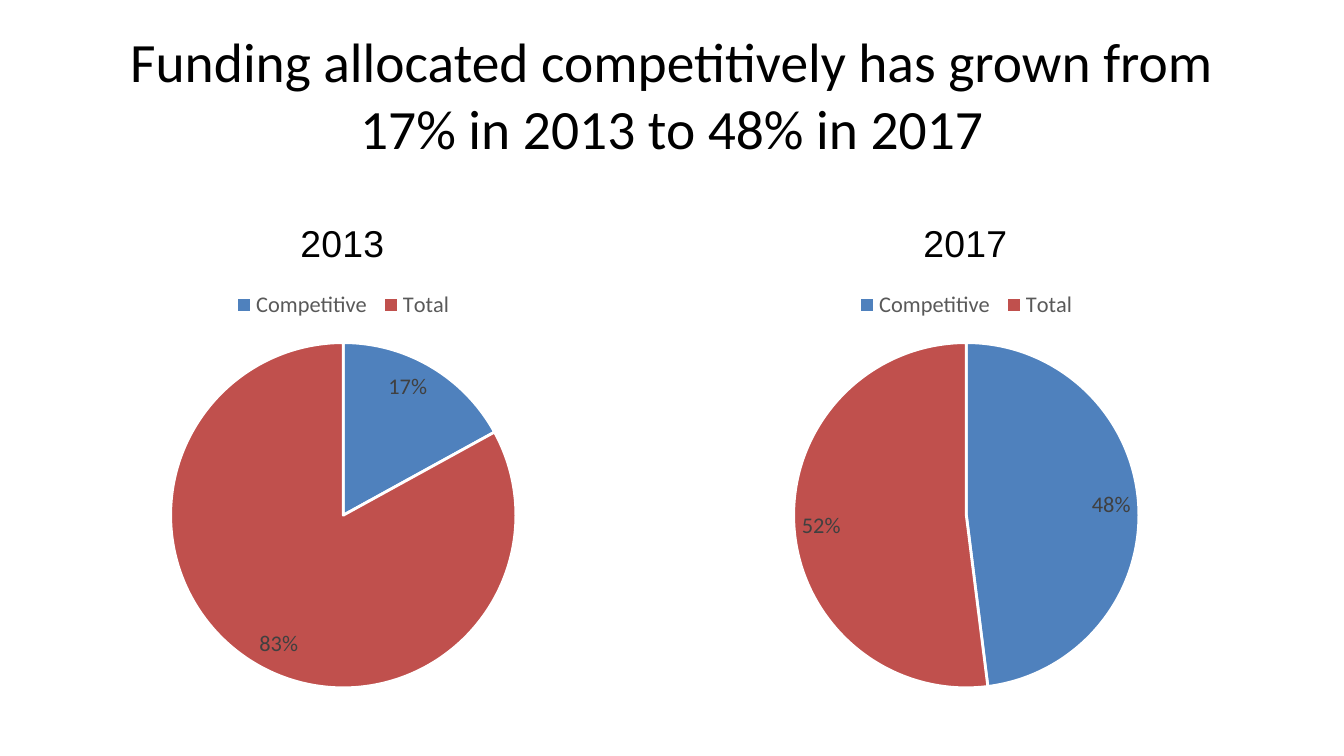
import pptx
import pptx.chart.data
import pptx.dml.color
import pptx.enum.chart
import pptx.enum.text
import pptx.oxml
import pptx.oxml.ns
import pptx.util

Inches, Pt = pptx.util.Inches, pptx.util.Pt

# Content
TITLE_LINES = ["Funding allocated competitively has grown from",
               "17% in 2013 to 48% in 2017"]
CATEGORIES = ["Competitive", "Total"]
PIES = [
    {"year": "2013", "shares": (17, 83), "left": -0.2, "width": 5.51},
    {"year": "2017", "shares": (48, 52), "left": 5, "width": 4.38},
]
COLORS = {"text": "000000", "legend": "595959", "label": "404040",
          "Competitive": "4F81BD", "Total": "C0504D", "border": "FFFFFF"}

# Chart geometry in inches; parts are centred across each chart
CHART_TOP, CHART_HEIGHT = 1.45, 3.81
PIE_TOP, PIE_SIZE = 1.1, 2.57
LEGEND_TOP, LEGEND_WIDTH, LEGEND_HEIGHT = 0.69, 1.72, 0.26
YEAR_TOP, YEAR_WIDTH = 0.13, 0.74


def rgb(name):
    return pptx.dml.color.RGBColor.from_string(COLORS[name])


def style(font, size, color, name="Calibri"):
    font.size, font.name, font.bold = Pt(size), name, False
    font.color.rgb = rgb(color)


def place(element, index, chart_width, top, width, height=None, inner=False):
    """Centre a chart part across its chart at a fixed top."""
    for old in element.findall(pptx.oxml.ns.qn("c:layout")):
        element.remove(old)
    values = [("x", (chart_width - width) / 2 / chart_width),
              ("y", top / CHART_HEIGHT)]
    if height:
        values += [("w", width / chart_width), ("h", height / CHART_HEIGHT)]
    tags = '<c:layoutTarget val="inner"/>' if inner else ""
    tags += '<c:xMode val="edge"/><c:yMode val="edge"/>'
    tags += "".join(f'<c:{key} val="{value:.4f}"/>' for key, value in values)
    element.insert(index, pptx.oxml.parse_xml(
        f'<c:layout {pptx.oxml.ns.nsdecls("c")}>'
        f"<c:manualLayout>{tags}</c:manualLayout></c:layout>"))


def add_pie(slide, year, shares, left, width):
    data = pptx.chart.data.CategoryChartData()
    data.categories = CATEGORIES
    data.add_series("Series 1", shares)
    chart = slide.shapes.add_chart(
        pptx.enum.chart.XL_CHART_TYPE.PIE, Inches(left), Inches(CHART_TOP),
        Inches(width), Inches(CHART_HEIGHT), data).chart
    style(chart.font, 10, "text")

    # Year heading
    chart.has_title = True
    span = chart.chart_title.text_frame.paragraphs[0].add_run()
    span.text = year
    style(span.font, 20, "text", "Arial")

    # Legend
    chart.has_legend = True
    legend = chart.legend
    legend.position = pptx.enum.chart.XL_LEGEND_POSITION.TOP
    legend.include_in_layout = False
    style(legend.font, 12, "legend")

    # Slices and percentages
    plot = chart.plots[0]
    plot.vary_by_categories = True
    for index, category in enumerate(CATEGORIES):
        slice_format = plot.series[0].points[index].format
        slice_format.fill.solid()
        slice_format.fill.fore_color.rgb = rgb(category)
        slice_format.line.color.rgb = rgb("border")
        slice_format.line.width = Pt(1.5)
    plot.has_data_labels = True
    labels = plot.data_labels
    labels.show_percentage, labels.show_value = True, False
    labels.number_format, labels.number_format_is_linked = "0%", False
    labels.position = pptx.enum.chart.XL_LABEL_POSITION.INSIDE_END
    style(labels.font, 12, "label")

    # Positions of the chart parts
    root = chart.element.find(pptx.oxml.ns.qn("c:chart"))
    heading, key, area = (root.find(pptx.oxml.ns.qn(tag))
                          for tag in ("c:title", "c:legend", "c:plotArea"))
    place(heading, 1, width, YEAR_TOP, YEAR_WIDTH)
    place(key, 1, width, LEGEND_TOP, LEGEND_WIDTH, LEGEND_HEIGHT)
    place(area, 0, width, PIE_TOP, PIE_SIZE, PIE_SIZE, inner=True)


def main():
    # Widescreen page, 16:9
    deck = pptx.Presentation()
    deck.slide_width = Inches(10)
    deck.slide_height = deck.slide_width * 9 // 16
    slide = deck.slides.add_slide(deck.slide_layouts[5])

    # Slide title
    box = slide.shapes.title
    box.left, box.top = Inches(0.5), Inches(0.23)
    box.width, box.height = Inches(9), Inches(0.94)
    frame = box.text_frame
    frame.auto_size = pptx.enum.text.MSO_AUTO_SIZE.NONE
    frame.vertical_anchor = pptx.enum.text.MSO_ANCHOR.MIDDLE
    para = frame.paragraphs[0]
    para.alignment = pptx.enum.text.PP_ALIGN.CENTER
    for index, line in enumerate(TITLE_LINES):
        if index:
            para.add_line_break()
        span = para.add_run()
        span.text = line
        style(span.font, 29.7, "text")

    # Pie charts
    for pie in PIES:
        add_pie(slide, **pie)

    deck.save("out.pptx")


if __name__ == "__main__":
    main()
